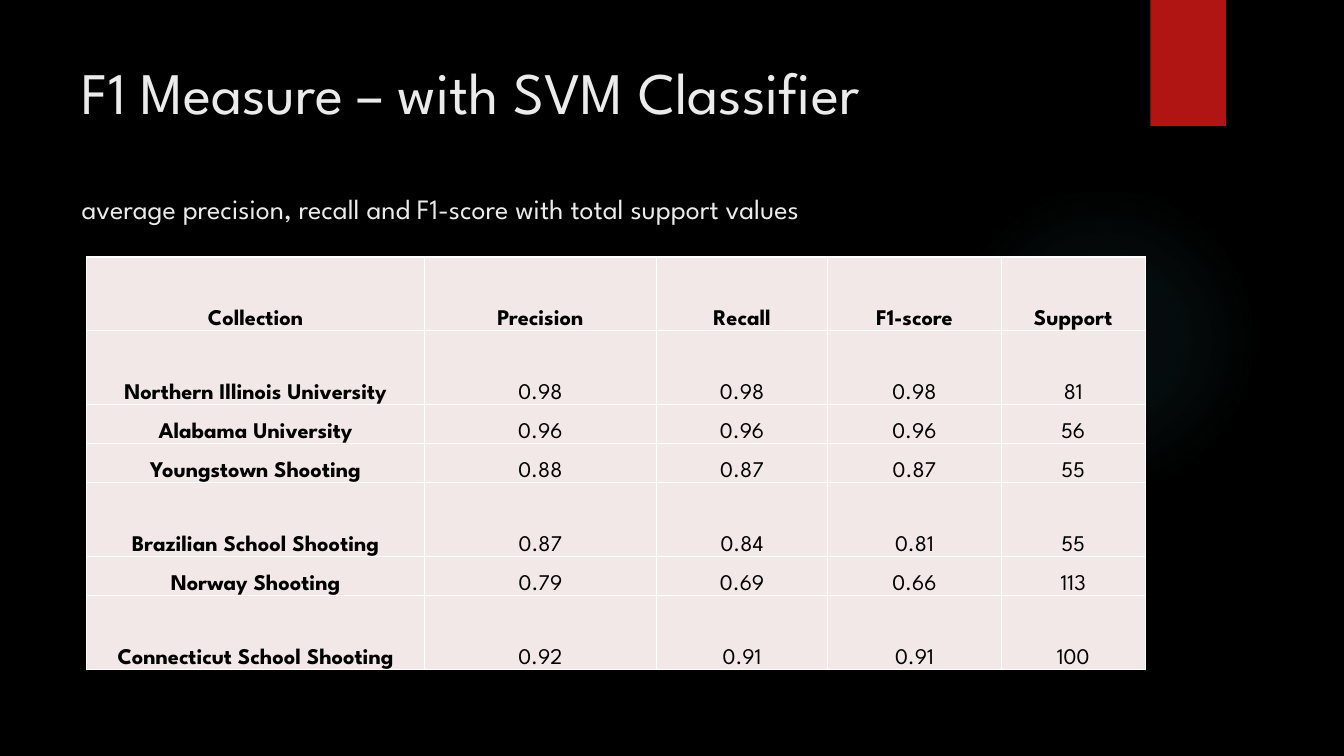
from lxml import etree
from pptx import Presentation
from pptx.dml.color import RGBColor
from pptx.enum.shapes import MSO_SHAPE as SHAPE
from pptx.enum.text import MSO_ANCHOR as ANCHOR, MSO_AUTO_SIZE as AUTO_SIZE, PP_ALIGN as ALIGN
from pptx.oxml import parse_xml
from pptx.oxml.ns import nsdecls, qn
from pptx.util import Inches, Pt

FONT = "League Spartan"
COLUMNS = [3.35, 2.3, 1.7, 1.72, 1.43]
TALL, SHORT = 0.73, 0.39
ROWS = [
    (TALL, ["Collection", "Precision", "Recall", "F1-score", "Support"]),
    (TALL, ["Northern Illinois University", "0.98", "0.98", "0.98", "81"]),
    (SHORT, ["Alabama University", "0.96", "0.96", "0.96", "56"]),
    (SHORT, ["Youngstown Shooting", "0.88", "0.87", "0.87", "55"]),
    (TALL, ["Brazilian School Shooting", "0.87", "0.84", "0.81", "55"]),
    (SHORT, ["Norway Shooting", "0.79", "0.69", "0.66", "113"]),
    (TALL, ["Connecticut School Shooting", "0.92", "0.91", "0.91", "100"]),
]


def rgb(value):
    """Turn a hex string into a colour."""
    return RGBColor.from_string(value)


def write(p, text, size=16, color="000000", bold=False, align=ALIGN.LEFT, before=0):
    """Put one formatted run in a paragraph."""
    p.alignment = align
    p.space_before = Pt(before)
    r = p.add_run()
    r.text = text
    r.font.name = FONT
    r.font.size = Pt(size)
    r.font.bold = bold
    r.font.color.rgb = rgb(color)


def add_panel(slide, kind, box, color):
    """Add a flat shape without outline or shadow."""
    sp = slide.shapes.add_shape(kind, *map(Inches, box))
    sp.shadow.inherit = False
    sp.line.fill.background()
    sp.fill.solid()
    sp.fill.fore_color.rgb = rgb(color)
    return sp


def add_glow(slide, box, color, stops):
    """Add an ellipse that fades out from its centre."""
    sp = add_panel(slide, SHAPE.OVAL, box, color)
    marks = "".join(
        f'<a:gs pos="{pos * 1000}"><a:srgbClr val="{color}">'
        f'<a:alpha val="{alpha * 1000}"/></a:srgbClr></a:gs>'
        for pos, alpha in stops
    )
    grad = parse_xml(
        f'<a:gradFill {nsdecls("a")}><a:gsLst>{marks}</a:gsLst><a:path path="circle">'
        '<a:fillToRect l="50000" t="50000" r="50000" b="50000"/></a:path></a:gradFill>'
    )
    solid = sp.element.spPr.find(qn("a:solidFill"))
    sp.element.spPr.replace(solid, grad)


def fill_title(slide, heading, caption):
    """Place the title with its smaller caption line."""
    sp = slide.shapes.title
    sp.left, sp.top, sp.width, sp.height = map(Inches, (0.71, 0.5, 10.29, 1.53))
    tf = sp.text_frame
    tf.word_wrap = True
    tf.auto_size = AUTO_SIZE.NONE
    tf.vertical_anchor = ANCHOR.TOP
    write(tf.paragraphs[0], heading, size=42, color="EBEBEB")
    write(tf.add_paragraph(), caption, size=20, color="EBEBEB", before=47)


def add_borders(cell, color, width):
    """Draw the four borders of a cell."""
    tc_pr = cell._tc.get_or_add_tcPr()
    for i, side in enumerate(("lnL", "lnR", "lnT", "lnB")):
        ln = etree.Element(qn(f"a:{side}"), w=str(Pt(width)))
        fill = etree.SubElement(ln, qn("a:solidFill"))
        etree.SubElement(fill, qn("a:srgbClr"), val=color)
        tc_pr.insert(i, ln)


def add_scores(slide):
    """Add the table of scores per collection."""
    height = sum(h for h, _ in ROWS)
    box = map(Inches, (0.86, 2.55, sum(COLUMNS), height))
    table = slide.shapes.add_table(len(ROWS), len(COLUMNS), *box).table
    for column, width in zip(table.columns, COLUMNS):
        column.width = Inches(width)
    for i, (height, texts) in enumerate(ROWS):
        table.rows[i].height = Inches(height)
        for j, text in enumerate(texts):
            cell = table.cell(i, j)
            cell.fill.solid()
            cell.fill.fore_color.rgb = rgb("F2E8E7")
            cell.vertical_anchor = ANCHOR.BOTTOM
            cell.margin_left = cell.margin_right = cell.margin_top = Inches(0.01)
            cell.margin_bottom = 0
            add_borders(cell, "FFFFFF", 1)
            write(cell.text_frame.paragraphs[0], text,
                  bold=i == 0 or j == 0, align=ALIGN.CENTER)


def main():
    """Build the slide and save it."""
    prs = Presentation()
    prs.slide_width, prs.slide_height = Inches(13.33), Inches(7.5)
    slide = prs.slides.add_slide(prs.slide_layouts[5])
    slide.background.fill.solid()
    slide.background.fill.fore_color.rgb = rgb("000000")
    add_glow(slide, (9.41, 1.83, 3.08, 3.08), "50B9C1", [(0, 7), (36, 6), (69, 0)])
    add_panel(slide, SHAPE.RECTANGLE, (11.41, 0, 0.75, 1.25), "B01513")
    fill_title(slide, "F1 Measure – with SVM Classifier",
               "average precision, recall and F1-score with total support values")
    add_scores(slide)
    prs.save("out.pptx")


if __name__ == "__main__":
    main()
